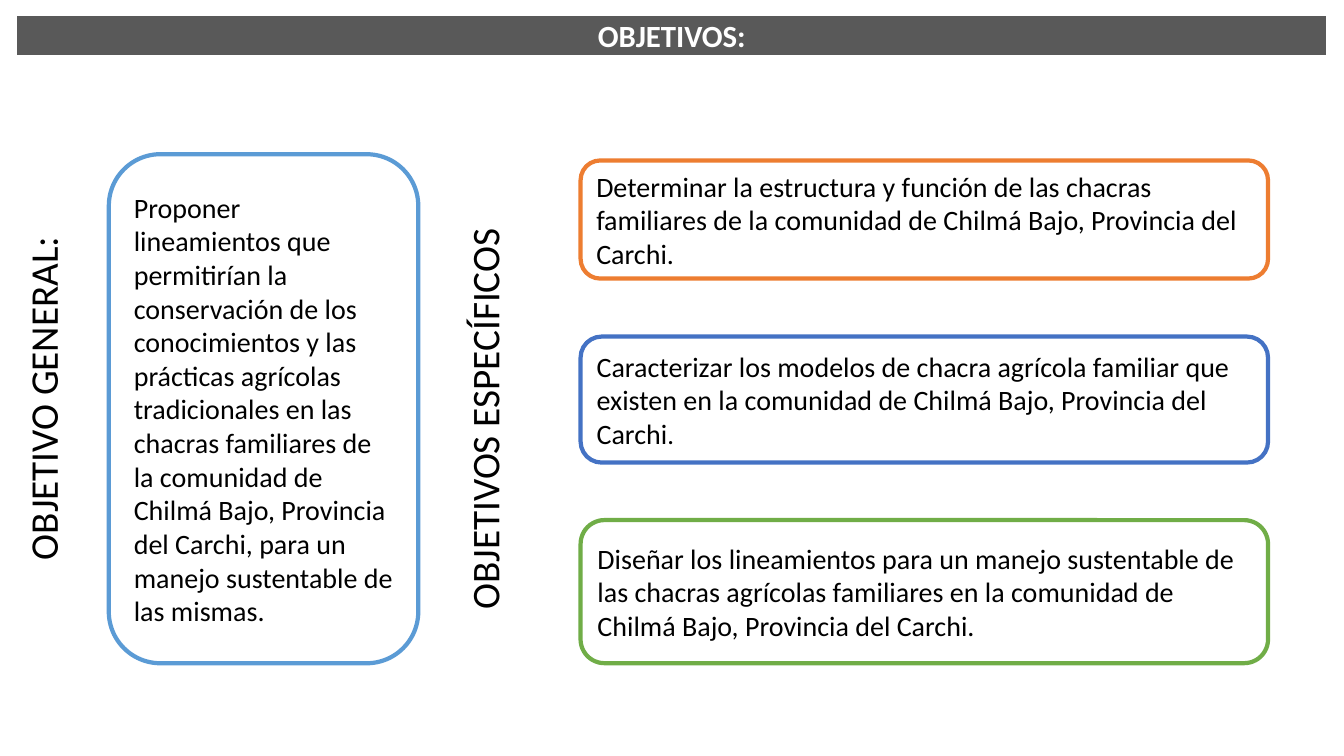
from dataclasses import dataclass

from pptx import Presentation
from pptx.dml.color import RGBColor
from pptx.enum.shapes import MSO_SHAPE
from pptx.enum.text import MSO_ANCHOR, MSO_AUTO_SIZE, PP_ALIGN
from pptx.util import Pt


@dataclass(frozen=True)
class Theme:
    font: str = "Calibri"
    white: str = "FFFFFF"
    black: str = "000000"
    banner: str = "595959"
    general: str = "5B9BD5"
    structure: str = "ED7D31"
    models: str = "4472C4"
    guidelines: str = "70AD47"
    title_size: float = 22
    body_size: float = 20
    stop_size: float = 19
    label_size: float = 28
    banner_line: float = 6
    card_line: float = 3


THEME = Theme()

GENERAL_GOAL = (
    "Proponer lineamientos que permitirían la conservación de los conocimientos "
    "y las prácticas agrícolas tradicionales en las chacras familiares de la "
    "comunidad de Chilmá Bajo, Provincia del Carchi, para un manejo sustentable "
    "de las mismas."
)
STRUCTURE_GOAL = (
    "Determinar la estructura y función de las chacras familiares de la "
    "comunidad de Chilmá Bajo, Provincia del Carchi."
)
MODELS_GOAL = (
    "Caracterizar los modelos de chacra agrícola familiar que existen en la "
    "comunidad de Chilmá Bajo, Provincia del Carchi"
)
GUIDELINES_GOAL = (
    "Diseñar los lineamientos para un manejo sustentable de las chacras "
    "agrícolas familiares en la comunidad de Chilmá Bajo, Provincia del Carchi."
)


def set_format(target, values):
    for name, value in values.items():
        setattr(target, name, value)


def paint(box, fill, line, width):
    box.fill.solid()
    box.fill.fore_color.rgb = RGBColor.from_string(fill)
    box.line.color.rgb = RGBColor.from_string(line)
    box.line.width = Pt(width)


def write(box, spans, color, align=PP_ALIGN.LEFT, anchor=MSO_ANCHOR.TOP, bold=False):
    """Fill the box with one paragraph made of (text, size) spans."""
    set_format(box.text_frame, {
        "word_wrap": True,
        "auto_size": MSO_AUTO_SIZE.NONE,
        "vertical_anchor": anchor,
    })
    para = box.text_frame.paragraphs[0]
    para.alignment = align
    for text, size in spans:
        span = para.add_run()
        span.text = text
        set_format(span.font, {"name": THEME.font, "size": Pt(size), "bold": bold})
        span.font.color.rgb = RGBColor.from_string(color)


def add_banner(page, text):
    title = page.shapes.title
    set_format(title, {
        "left": Pt(9.36), "top": Pt(8.64), "width": Pt(941), "height": Pt(33.84),
    })
    paint(title, THEME.banner, THEME.white, THEME.banner_line)
    write(title, [(text, THEME.title_size)], THEME.white, PP_ALIGN.CENTER, bold=True)


def add_card(page, frame, line, spans):
    card = page.shapes.add_shape(MSO_SHAPE.ROUNDED_RECTANGLE, *map(Pt, frame))
    card.shadow.inherit = False
    paint(card, THEME.white, line, THEME.card_line)
    write(card, spans, THEME.black, anchor=MSO_ANCHOR.MIDDLE)


def add_side_label(page, center_x, center_y, length, text):
    """Add a label that reads upwards, centred on the given point."""
    height = 41
    label = page.shapes.add_textbox(
        Pt(center_x - length / 2), Pt(center_y - height / 2), Pt(length), Pt(height)
    )
    label.rotation = 270
    write(label, [(text, THEME.label_size)], THEME.black)


def main():
    deck = Presentation()
    set_format(deck, {"slide_width": Pt(960), "slide_height": Pt(540)})
    page = deck.slides.add_slide(deck.slide_layouts[5])

    add_banner(page, "OBJETIVOS:")
    add_card(page, (77.76, 110.16, 221.04, 363.6), THEME.general,
             [(GENERAL_GOAL, THEME.body_size)])

    specific_goals = [
        (114.6, 84.4, THEME.structure, [(STRUCTURE_GOAL, THEME.body_size)]),
        (240.4, 90, THEME.models,
         [(MODELS_GOAL, THEME.body_size), (".", THEME.stop_size)]),
        (371.5, 102.2, THEME.guidelines, [(GUIDELINES_GOAL, THEME.body_size)]),
    ]
    for top, height, line, spans in specific_goals:
        add_card(page, (414.72, top, 491.04, height), line, spans)

    add_side_label(page, 30.24, 273.2, 267.84, "OBJETIVO GENERAL:")
    add_side_label(page, 345.6, 285.4, 313.92, "OBJETIVOS ESPECÍFICOS")
    deck.save("out.pptx")


if __name__ == "__main__":
    main()
